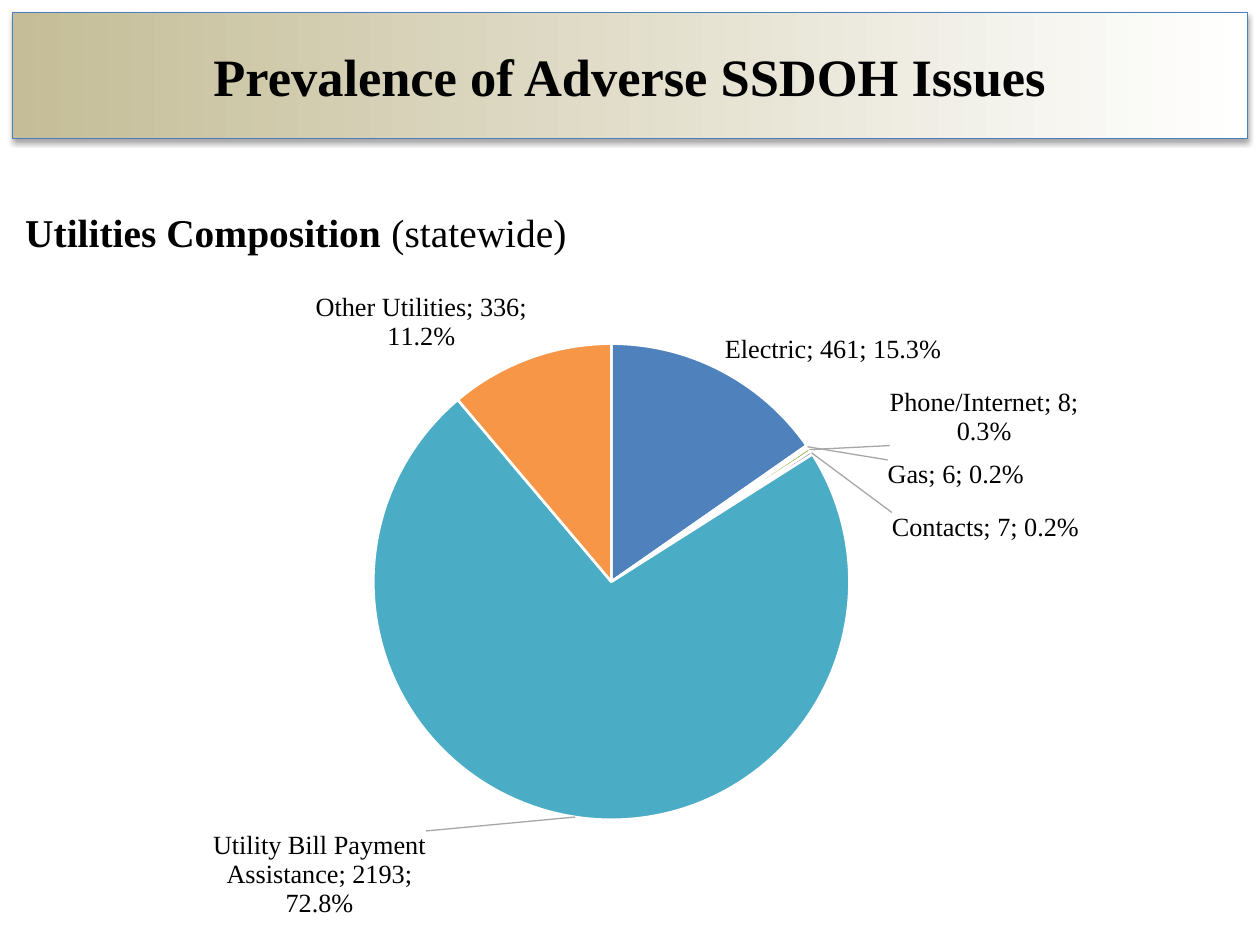
from copy import deepcopy
from dataclasses import dataclass

from pptx import Presentation
from pptx.chart.data import CategoryChartData as ChartData
from pptx.dml.color import RGBColor as Rgb
from pptx.enum.chart import XL_CHART_TYPE as ChartType, XL_LABEL_POSITION as LabelPosition
from pptx.enum.shapes import MSO_SHAPE as Shape
from pptx.enum.text import MSO_ANCHOR as Anchor, PP_ALIGN as Align
from pptx.oxml import parse_xml
from pptx.oxml.ns import nsdecls
from pptx.util import Inches, Pt

SLICES = [
    ("Electric", 461, "4F81BD"),
    ("Gas", 6, "C0504D"),
    ("Phone/Internet", 8, "9BBB59"),
    ("Contacts", 7, "8064A2"),
    ("Utility Bill Payment Assistance", 2193, "4BACC6"),
    ("Other Utilities", 336, "F79646"),
]
# Label shifts from the outside end, as shares of the chart's size
LABEL_SHIFTS = {1: (0.06, 0.07), 2: (0.06, 0), 3: (0.06, 0.14), 4: (-0.12, 0.01)}
PIE_AREA = {"x": 0.29, "y": 0.11, "w": 0.39, "h": 0.72}


@dataclass(frozen=True)
class Theme:
    font: str = "Times New Roman"
    ink: str = "000000"
    paper: str = "FFFFFF"
    sand: str = "C4BD97"
    edge: str = "4B7EBC"
    leader: str = "A6A6A6"
    title_size: float = 30
    body_size: float = 22.5
    label_size: float = 15


def rgb(code):
    return Rgb.from_string(code)


def manual_layout(inner=False, **shares):
    """Return a chart layout element with the given shares of the chart's size."""
    target = '<c:layoutTarget val="inner"/>' if inner else ""
    modes = '<c:xMode val="edge"/><c:yMode val="edge"/>' if inner else ""
    places = "".join(f'<c:{name} val="{share}"/>' for name, share in shares.items())
    return parse_xml(f'<c:layout {nsdecls("c")}><c:manualLayout>{target}{modes}{places}'
                     '</c:manualLayout></c:layout>')


class SlideBuilder:
    """Places elements on a grid of 100 columns by 75 rows."""

    def __init__(self, deck, theme):
        self.theme = theme
        self.page = deck.slides.add_slide(deck.slide_layouts[1])
        self.column = deck.slide_width / 100
        self.row = deck.slide_height / 75

    def area(self, left, top, columns, rows):
        return (round(left * self.column), round(top * self.row),
                round(columns * self.column), round(rows * self.row))

    def style(self, font, size, bold=False):
        font.name, font.size, font.bold = self.theme.font, Pt(size), bold
        font.color.rgb = rgb(self.theme.ink)

    def banner(self, *grid):
        box = self.page.shapes.add_shape(Shape.RECTANGLE, *self.area(*grid))
        box.fill.gradient()
        box.fill.gradient_angle = 0
        for stop, color in zip(box.fill.gradient_stops, (self.theme.sand, self.theme.paper)):
            stop.color.rgb = rgb(color)
        box.line.color.rgb = rgb(self.theme.edge)
        box.line.width = Pt(0.75)
        box.shadow.inherit = False
        box.element.spPr.xpath("a:effectLst")[0].append(parse_xml(
            f'<a:outerShdw {nsdecls("a")} blurRad="{Pt(3.1)}" dist="{Pt(1.8)}" '
            'dir="5400000" rotWithShape="0"><a:srgbClr val="000000">'
            '<a:alpha val="35000"/></a:srgbClr></a:outerShdw>'))
        self.page.shapes.element.insert(2, box.element)  # behind the title

    def fill_placeholder(self, box, grid, spans, size, align, anchor):
        """Move a placeholder and write one paragraph of (text, bold) spans."""
        box.left, box.top, box.width, box.height = self.area(*grid)
        frame = box.text_frame
        frame.word_wrap, frame.vertical_anchor = True, anchor
        para = frame.paragraphs[0]
        para.alignment, para.space_before = align, Pt(0)
        for text, bold in spans:
            span = para.add_run()
            span.text = text
            self.style(span.font, size, bold)
        return para

    def title(self, text, *grid):
        self.fill_placeholder(self.page.shapes.title, grid, [(text, True)],
                              self.theme.title_size, Align.CENTER, Anchor.MIDDLE)

    def body(self, spans, *grid):
        box = self.page.placeholders[1]
        para = self.fill_placeholder(box, grid, spans, self.theme.body_size,
                                     Align.LEFT, Anchor.TOP)
        box.text_frame.margin_top = Inches(0.45)
        props = para._p.get_or_add_pPr()
        props.set("marL", "0")
        props.set("indent", "0")
        props.append(parse_xml(f'<a:buNone {nsdecls("a")}/>'))

    def pie(self, slices, shifts, *grid):
        data = ChartData()
        data.categories = [name for name, _, _ in slices]
        data.add_series("Series 1", [count for _, count, _ in slices])
        chart = self.page.shapes.add_chart(ChartType.PIE, *self.area(*grid), data).chart
        chart.has_legend = chart.has_title = False
        self.style(chart.font, self.theme.label_size)
        plot_area = chart._chartSpace.xpath("c:chart/c:plotArea")[0]
        for old in plot_area.xpath("c:layout"):
            plot_area.remove(old)
        plot_area.insert(0, manual_layout(inner=True, **PIE_AREA))
        chart.plots[0].vary_by_categories = True
        series = chart.plots[0].series[0]
        for index, (_, _, color) in enumerate(slices):
            look = series.points[index].format
            look.fill.solid()
            look.fill.fore_color.rgb = rgb(color)
            look.line.color.rgb = rgb(self.theme.paper)
            look.line.width = Pt(1.5)
        self.pie_labels(series.data_labels, shifts)

    def pie_labels(self, labels, shifts):
        labels.show_category_name = labels.show_value = labels.show_percentage = True
        labels.number_format, labels.number_format_is_linked = "0.0%", False
        labels.position = LabelPosition.OUTSIDE_END
        self.style(labels.font, self.theme.label_size)
        root = labels._element
        for old in root.xpath("c:showLeaderLines"):
            root.remove(old)
        root.append(parse_xml(f'<c:separator {nsdecls("c")}>; </c:separator>'))
        shared = list(root)
        for place, (index, (x, y)) in enumerate(shifts.items()):
            label = parse_xml(f'<c:dLbl {nsdecls("c")}><c:idx val="{index}"/></c:dLbl>')
            label.append(manual_layout(x=x, y=y))
            label.extend(deepcopy(part) for part in shared)
            root.insert(place, label)
        root.append(parse_xml(f'<c:showLeaderLines {nsdecls("c")} val="1"/>'))
        root.append(parse_xml(
            f'<c:leaderLines {nsdecls("c", "a")}><c:spPr><a:ln w="9525"><a:solidFill>'
            f'<a:srgbClr val="{self.theme.leader}"/></a:solidFill></a:ln></c:spPr>'
            '</c:leaderLines>'))


def main():
    deck = Presentation()
    deck.slide_width, deck.slide_height = Inches(10), Inches(7.5)
    slide = SlideBuilder(deck, Theme())
    heading = (1, 1, 98, 10)
    slide.banner(*heading)
    slide.title("Prevalence of Adverse SSDOH Issues", *heading)
    slide.body([("Utilities Composition ", True), ("(statewide)", False)], 1, 12, 98, 60)
    slide.pie(SLICES, LABEL_SHIFTS, 1, 21.5, 98, 52.5)
    deck.save("out.pptx")


if __name__ == "__main__":
    main()
